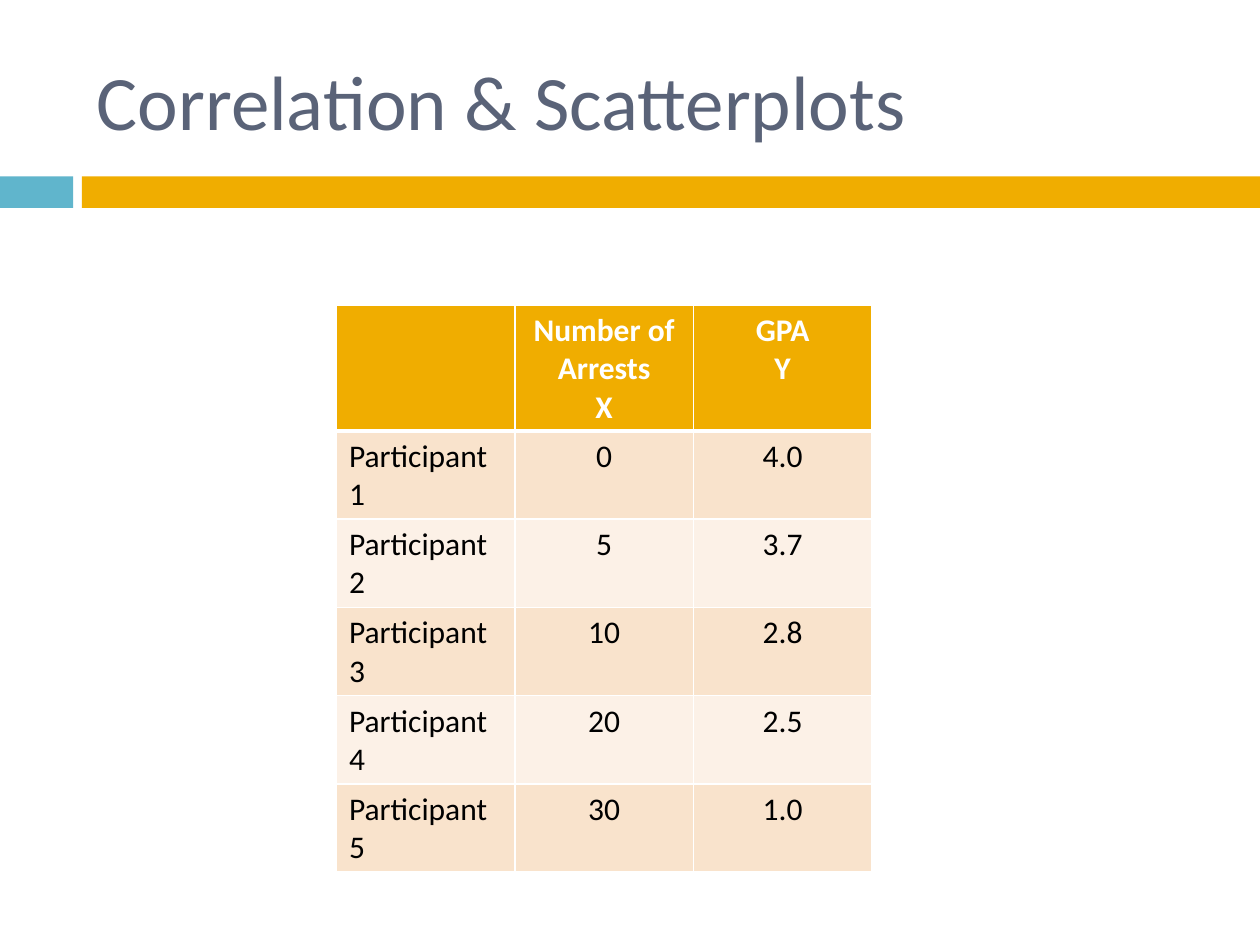
import pptx
import pptx.util
import pptx.dml.color
import pptx.enum.shapes
import pptx.enum.text
import pptx.oxml
import pptx.oxml.ns
import lxml.etree

Inches = pptx.util.Inches
ALIGN = pptx.enum.text.PP_ALIGN
theme = {
    "font": "Calibri", "title": 44, "body": 18,
    "slate": "5A6378", "gold": "F0AD00", "blue": "60B5CC",
    "white": "FFFFFF", "black": "000000", "bands": ["F9E3CC", "FCF1E7"],
}


def write(par, text, size, color, bold=False):
    run = par.add_run()
    run.text = text
    run.font.name = theme["font"]
    run.font.size = pptx.util.Pt(size)
    run.font.bold = bold
    run.font.color.rgb = pptx.dml.color.RGBColor.from_string(color)


def edge(cell, widths):
    props = cell._tc.get_or_add_tcPr()
    for spot, (side, width) in enumerate(widths.items()):
        line = lxml.etree.Element(pptx.oxml.ns.qn("a:ln" + side), w=str(pptx.util.Pt(width)))
        fill = lxml.etree.SubElement(line, pptx.oxml.ns.qn("a:solidFill"))
        lxml.etree.SubElement(fill, pptx.oxml.ns.qn("a:srgbClr"), val=theme["white"])
        props.insert(spot, line)


deck = pptx.Presentation()
deck.slide_width, deck.slide_height = Inches(10), Inches(7.5)
slide = deck.slides.add_slide(deck.slide_layouts[6])

for left, width, color in [(0, 0.58, "blue"), (0.65, 9.35, "gold")]:
    bar = slide.shapes.add_shape(
        pptx.enum.shapes.MSO_SHAPE.RECTANGLE,
        Inches(left), Inches(1.4), Inches(width), Inches(0.25))
    bar.shadow.inherit = False
    bar.fill.solid()
    bar.fill.fore_color.rgb = pptx.dml.color.RGBColor.from_string(theme[color])
    bar.line.fill.background()

title = slide.shapes.add_textbox(Inches(0.67), Inches(0.25), Inches(8.92), Inches(1.08))
frame = title.text_frame
frame.word_wrap = True
frame.vertical_anchor = pptx.enum.text.MSO_ANCHOR.MIDDLE
write(frame.paragraphs[0], "Correlation & Scatterplots", theme["title"], theme["slate"])

scores = [("0", "4.0"), ("5", "3.7"), ("10", "2.8"), ("20", "2.5"), ("30", "1.0")]
rows = [("", "Number of Arrests\nX", "GPA\nY")]
rows += [(f"Participant {num}", *pair) for num, pair in enumerate(scores, 1)]

grid = slide.shapes.add_table(
    len(rows), 3, Inches(2.67), Inches(2.42), Inches(4.25), Inches(3.03)).table
for r, row in enumerate(rows):
    head = r == 0
    back = theme["gold"] if head else theme["bands"][(r - 1) % 2]
    ink = theme["white"] if head else theme["black"]
    for c, text in enumerate(row):
        cell = grid.cell(r, c)
        cell.fill.solid()
        cell.fill.fore_color.rgb = pptx.dml.color.RGBColor.from_string(back)
        edge(cell, {"L": 1, "R": 1, "T": 3 if r == 1 else 1, "B": 3 if head else 1})
        if not text:
            continue
        for n, part in enumerate(text.split("\n")):
            par = cell.text_frame.add_paragraph() if n else cell.text_frame.paragraphs[0]
            par.alignment = ALIGN.CENTER if c else ALIGN.LEFT
            write(par, part, theme["body"], ink, head)

deck.save("out.pptx")
